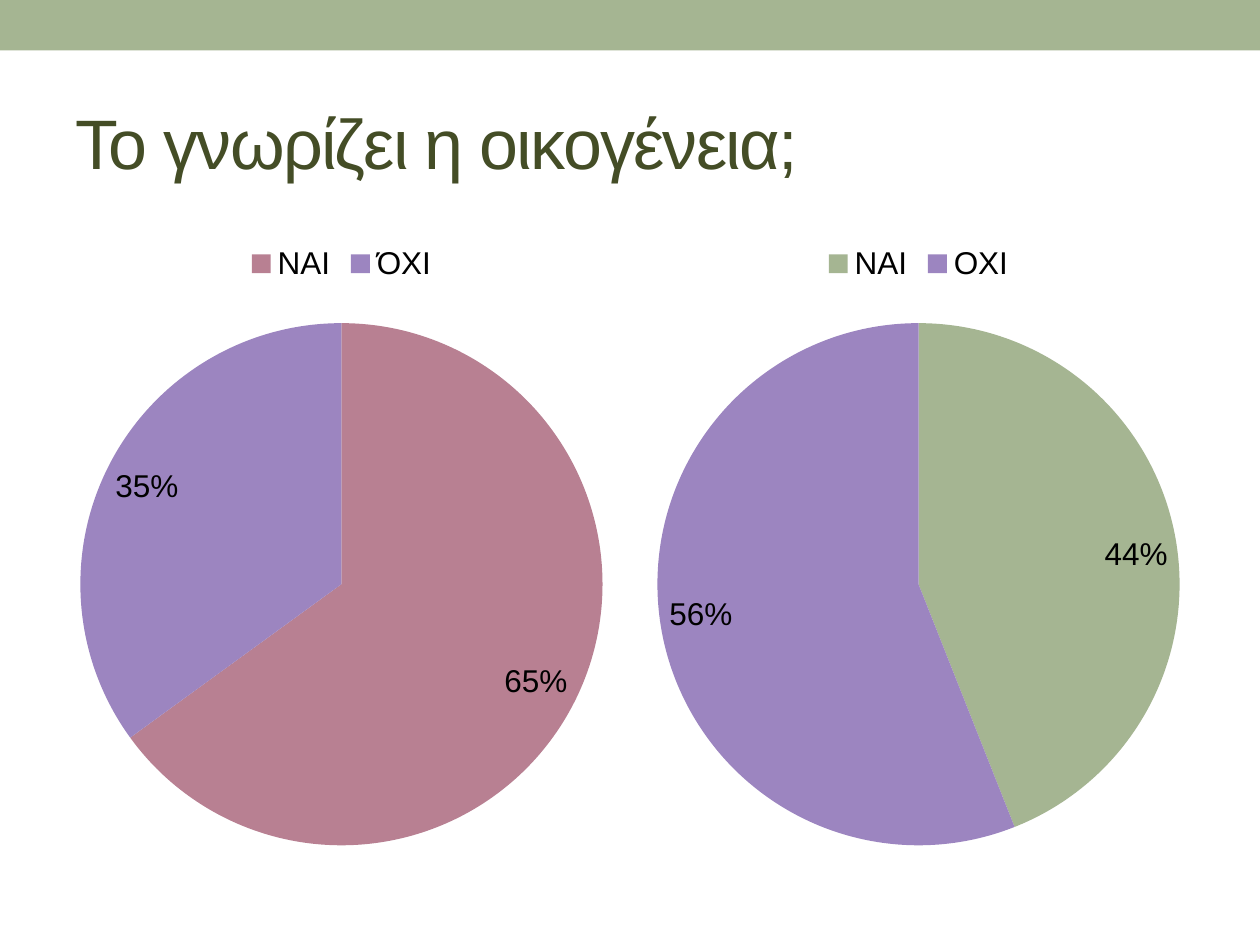
import pptx
import pptx.chart.data
import pptx.dml.color
import pptx.enum.chart
import pptx.enum.shapes
import pptx.enum.text
import pptx.util
from pptx.util import Inches

FONT = "Arial"


def colour(hex_string):
    return pptx.dml.color.RGBColor.from_string(hex_string)


def style_font(font, size, hex_string):
    font.name = FONT
    font.size = pptx.util.Pt(size)
    font.color.rgb = colour(hex_string)


deck = pptx.Presentation()
deck.slide_width = Inches(10)
deck.slide_height = Inches(7.5)
slide = deck.slides.add_slide(deck.slide_layouts[5])

# Top band
band = slide.shapes.add_shape(
    pptx.enum.shapes.MSO_SHAPE.RECTANGLE, 0, 0, deck.slide_width, Inches(0.4))
band.shadow.inherit = False
band.fill.solid()
band.fill.fore_color.rgb = colour("A5B592")
band.line.fill.background()

# Question
question = slide.shapes.title
question.left, question.top = Inches(0.5), Inches(0.58)
question.width, question.height = Inches(9), Inches(1.08)
question.text_frame.word_wrap = True
question.text_frame.vertical_anchor = pptx.enum.text.MSO_ANCHOR.MIDDLE
paragraph = question.text_frame.paragraphs[0]
paragraph.alignment = pptx.enum.text.PP_ALIGN.LEFT
run = paragraph.add_run()
run.text = "Το γνωρίζει η οικογένεια;"
style_font(run.font, 40, "444D26")
run.font._element.set("spc", "-100")

# Answer pies: left edge, categories, values, slice colours
pies = [
    (0.5, ["ΝΑΙ", "ΌΧΙ"], [65, 35], ["B88092", "9C85C0"]),
    (5.08, ["NAI", "OXI"], [44, 56], ["A5B592", "9C85C0"]),
]
for left, answers, shares, slice_colours in pies:
    data = pptx.chart.data.CategoryChartData()
    data.categories = answers
    data.add_series("Series 1", shares)
    pie = slide.shapes.add_chart(
        pptx.enum.chart.XL_CHART_TYPE.PIE,
        Inches(left), Inches(1.83), Inches(4.42), Inches(5.16), data).chart
    style_font(pie.font, 18, "000000")
    pie.has_title = False

    pie.has_legend = True
    pie.legend.position = pptx.enum.chart.XL_LEGEND_POSITION.TOP
    pie.legend.include_in_layout = False

    plot = pie.plots[0]
    plot.vary_by_categories = True
    for index, slice_colour in enumerate(slice_colours):
        fill = plot.series[0].points[index].format.fill
        fill.solid()
        fill.fore_color.rgb = colour(slice_colour)

    plot.has_data_labels = True
    labels = plot.data_labels
    labels.show_percentage = True
    labels.show_value = False
    labels.number_format = "0%"
    labels.number_format_is_linked = False
    labels.position = pptx.enum.chart.XL_LABEL_POSITION.INSIDE_END
    style_font(labels.font, 18, "000000")

deck.save("out.pptx")
